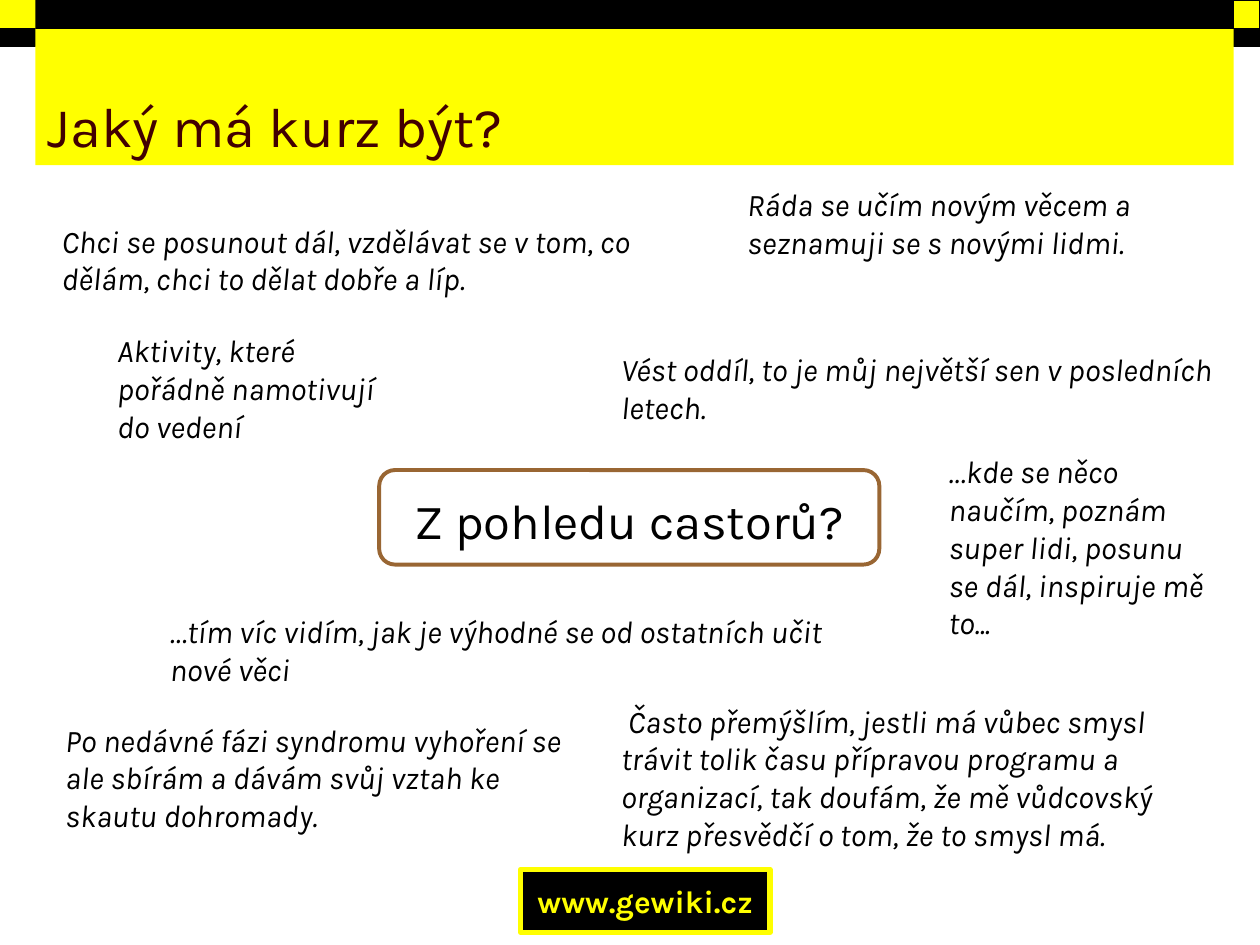
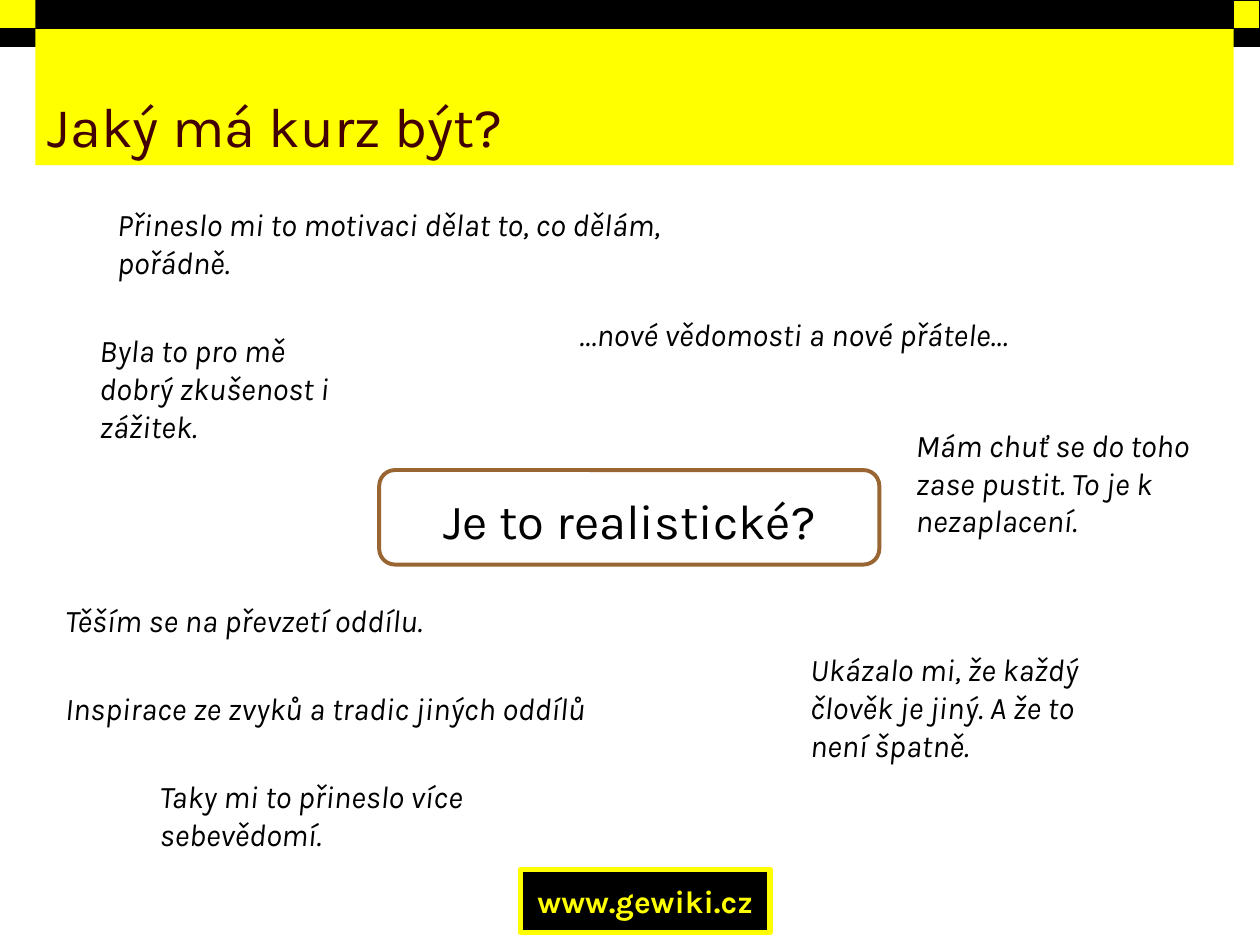
from lxml import etree
from pptx import Presentation
from pptx.dml.color import RGBColor
from pptx.enum import shapes, text
from pptx.oxml import ns
from pptx.util import Pt

HUES = {"ink": "000000", "sun": "FFFF00", "wine": "420000", "wood": "996633"}
FACE = "Karla"
WIDE, HIGH = 720, 540
EDGE, RIGHT = 20.2, 704.9
BAR, STEP = 16.6, 10.1
HEAD = (EDGE, BAR, RIGHT - EDGE, 77.8)
CORE = (216.7, 268.6, 285.8, 54)
SITE = (297.4, 496.8, 142.6, 36)
TITLE = "Jaký má kurz být?"
LINE, PAD = 21.9, 7

DECK = [
    ("Z pohledu castorů?", [
        (30.2, 408.2, 306, 3, "Po nedávné fázi syndromu vyhoření se ale sbírám a dávám svůj vztah ke skautu dohromady."),
        (347.8, 196.6, 354.2, 2, "Vést oddíl, to je můj největší sen v posledních letech."),
        (28.1, 123.1, 354.2, 2, "Chci se posunout dál, vzdělávat se v tom, co dělám, chci to dělat dobře a líp."),
        (419.8, 102.2, 246.2, 3, "Ráda se učím novým věcem a seznamuji se s novými lidmi."),
        (535, 254.9, 167.8, 5, "…kde se něco naučím, poznám super lidi, posunu se dál, inspiruje mě to..."),
        (59.8, 185.8, 163.4, 4, "Aktivity, které pořádně namotivují do vedení"),
        (90, 346.3, 401.8, 2, "…tím víc vidím, jak je výhodné se od ostatních učit nové věci"),
        (347.8, 397.4, 354.2, 4, " Často přemýšlím, jestli má vůbec smysl trávit tolik času přípravou programu a organizací, tak doufám, že mě vůdcovský kurz přesvědčí o tom, že to smysl má."),
    ]),
    ("Je to realistické?", [
        (59.8, 113.8, 354.2, 2, "Přineslo mi to motivaci dělat to, co dělám, pořádně."),
        (324, 176.4, 354.2, 1, "…nové vědomosti a nové přátele…"),
        (30.2, 390.2, 354.2, 1, "Inspirace ze zvyků a tradic jiných oddílů"),
        (516.2, 239.8, 198, 3, "Mám chuť se do toho zase pustit. To je k nezaplacení."),
        (455.8, 367.9, 198, 3, "Ukázalo mi, že každý člověk je jiný. A že to není špatně."),
        (49.7, 185.8, 156.2, 3, "Byla to pro mě dobrý zkušenost i zážitek."),
        (30.2, 339.8, 354.2, 1, "Těším se na převzetí oddílu."),
        (84.2, 440.6, 195.8, 2, "Taky mi to přineslo více sebevědomí."),
    ]),
]


def put(thing, **vals):
    """Set each named attribute on the given object."""
    for name, val in vals.items():
        setattr(thing, name, val)


def hue(name):
    """Return a named colour."""
    return RGBColor.from_string(HUES[name])


def move(shape, box):
    """Place a shape in a box given in points."""
    put(shape, **dict(zip(("left", "top", "width", "height"), map(Pt, box))))


def paint(shape, fill=None, line=None, width=1):
    """Give a shape its fill and outline, or none."""
    for part, name in ((shape.fill, fill), (shape.line.fill, line)):
        if name:
            part.solid()
            part.fore_color.rgb = hue(name)
        else:
            part.background()
    if line:
        shape.line.width = Pt(width)


def write(shape, words, size, tint="ink", align=text.PP_ALIGN.LEFT, frame=None, **font):
    """Write one formatted paragraph into a shape."""
    body = shape.text_frame
    put(body, **{"word_wrap": True, "auto_size": text.MSO_AUTO_SIZE.NONE, **(frame or {})})
    para = body.paragraphs[0]
    para.alignment = align
    run = para.add_run()
    run.text = words
    put(run.font, **{"name": FACE, "size": Pt(size), "bold": False, **font})
    run.font.color.rgb = hue(tint)
    return para


def block(slide, box, fill, line="ink", width=1):
    """Draw a plain rectangle."""
    shape = slide.shapes.add_shape(shapes.MSO_SHAPE.RECTANGLE, *map(Pt, box))
    shape.shadow.inherit = False
    paint(shape, fill, line, width)
    return shape


def band(slide):
    """Draw the top band with its corner steps."""
    return [
        block(slide, (702, 0, WIDE - 702, BAR), "sun"),
        block(slide, (0, 0, RIGHT, BAR), "ink"),
        block(slide, (RIGHT, BAR, WIDE - RIGHT, STEP), "ink"),
        block(slide, (0, 0, EDGE, BAR), "sun", None),
        block(slide, (0, BAR, EDGE, STEP), "ink"),
    ]


def foot(slide, box):
    """Draw the framed web address."""
    shape = block(slide, box, "ink", "sun", 3)
    sides = ("left", "top", "right", "bottom")
    frame = {f"margin_{side}": Pt(5.8) for side in sides}
    frame.update(word_wrap=False, auto_size=text.MSO_AUTO_SIZE.SHAPE_TO_FIT_TEXT)
    write(shape, "www.gewiki.cz", 18, "sun", text.PP_ALIGN.CENTER, frame, bold=True)
    return shape


def share(slide):
    """Hand the band and footer over to the slide layout."""
    tree = slide.slide_layout.shapes.element
    for shape in band(slide) + [foot(slide, SITE)]:
        tree.append(shape.element)


def head(slide, box):
    """Fill the title band."""
    shape = slide.shapes.title
    move(shape, box)
    paint(shape, "sun")
    write(shape, TITLE, 32, "wine", frame={"vertical_anchor": text.MSO_ANCHOR.BOTTOM})


def core(slide, box, words):
    """Fill the rounded question box in the middle."""
    shape = slide.placeholders[1]
    move(shape, box)
    geom = etree.Element(ns.qn("a:prstGeom"), prst="roundRect")
    etree.SubElement(geom, ns.qn("a:avLst"))
    shape.element.spPr.insert(1, geom)
    paint(shape, None, "wood", 2.25)
    frame = {"margin_top": Pt(9.2), "vertical_anchor": text.MSO_ANCHOR.TOP}
    para = write(shape, words, 28, align=text.PP_ALIGN.CENTER, frame=frame)
    para.space_before = Pt(0)
    props = para._p.get_or_add_pPr()
    props.set("marL", "0")
    props.set("indent", "0")
    etree.SubElement(props, ns.qn("a:buNone"))


def quote(slide, left, top, width, rows, words):
    """Place one quotation, its height following its rows."""
    shape = slide.shapes.add_textbox(*map(Pt, (left, top, width, PAD + rows * LINE)))
    write(shape, words, 18, frame={"auto_size": text.MSO_AUTO_SIZE.SHAPE_TO_FIT_TEXT}, italic=True)


def main():
    """Build and save the deck."""
    deck = Presentation()
    put(deck, slide_width=Pt(WIDE), slide_height=Pt(HIGH))
    for turn, (ask, quotes) in enumerate(DECK):
        slide = deck.slides.add_slide(deck.slide_layouts[1])
        if turn == 0:
            share(slide)
        head(slide, HEAD)
        core(slide, CORE, ask)
        for item in quotes:
            quote(slide, *item)
    deck.save("out.pptx")


if __name__ == "__main__":
    main()
